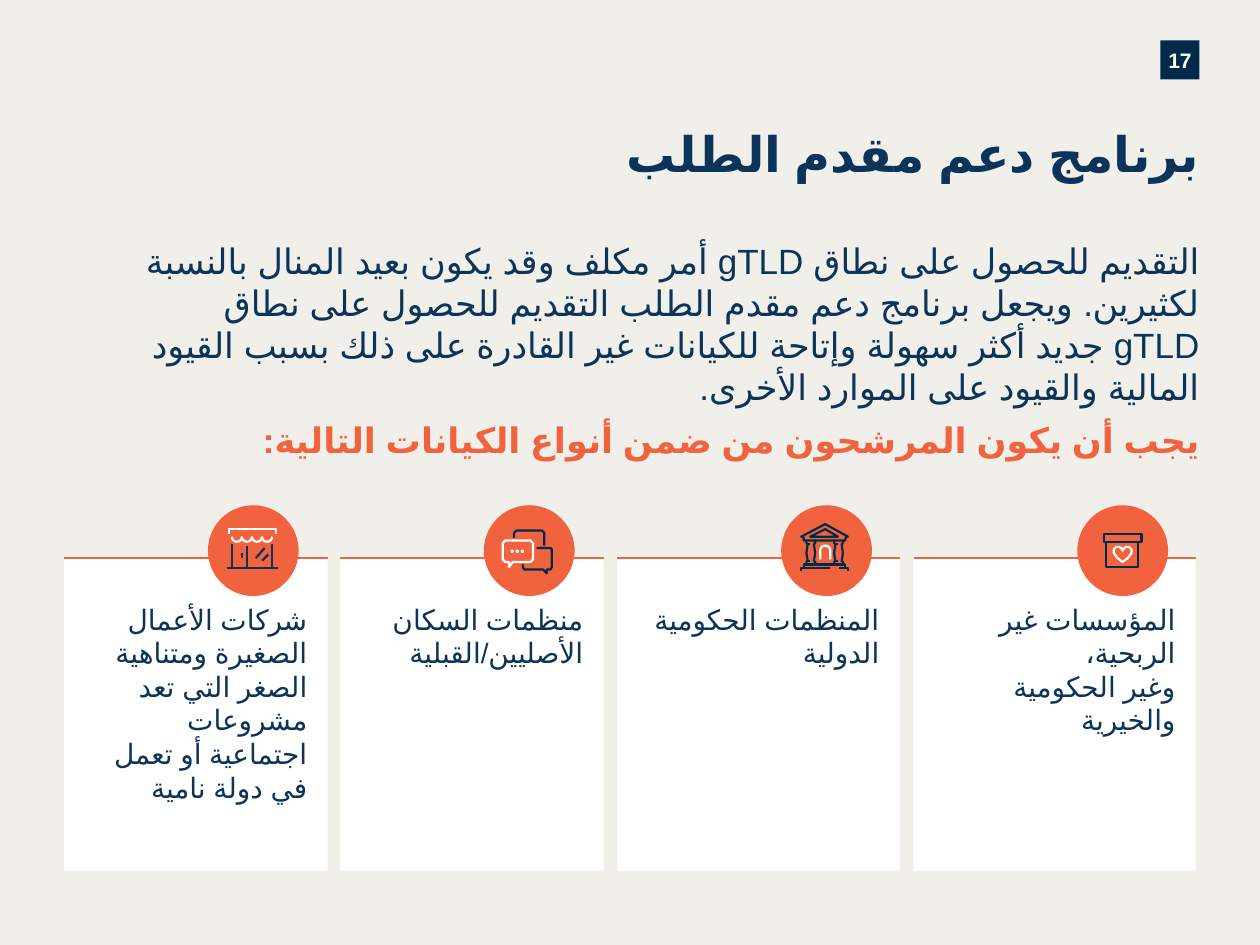
from math import cos, pi, sin

from lxml.etree import SubElement
from pptx import Presentation
from pptx.dml.color import RGBColor
from pptx.enum.shapes import MSO_CONNECTOR, MSO_SHAPE
from pptx.enum.text import MSO_ANCHOR, MSO_AUTO_SIZE, PP_ALIGN
from pptx.oxml.ns import qn
from pptx.util import Inches, Pt

PAPER = RGBColor(0xF1, 0xEF, 0xEA)
WHITE = RGBColor(0xFF, 0xFF, 0xFF)
NAVY = RGBColor(0x0B, 0x34, 0x58)
DARK = RGBColor(0x00, 0x2B, 0x49)
BADGE = RGBColor(0x00, 0x2A, 0x49)
ORANGE = RGBColor(0xF1, 0x63, 0x3E)


def write(frame, paragraphs, size, color, bold=False, insets=(0, 0, 0, 0),
          anchor=MSO_ANCHOR.TOP, align=PP_ALIGN.RIGHT):
    """Fill a text frame; right-aligned text is Arabic and runs right to left."""
    frame.word_wrap = True
    frame.auto_size = MSO_AUTO_SIZE.NONE
    frame.vertical_anchor = anchor
    (frame.margin_left, frame.margin_top,
     frame.margin_right, frame.margin_bottom) = map(Inches, insets)
    for i, text in enumerate(paragraphs):
        paragraph = frame.add_paragraph() if i else frame.paragraphs[0]
        paragraph.alignment = align
        run = paragraph.add_run()
        run.text = text
        run.font.name = "Arial"
        run.font.size = Pt(size)
        run.font.bold = bold
        run.font.color.rgb = color
        if align == PP_ALIGN.RIGHT:
            paragraph._p.get_or_add_pPr().set("rtl", "1")
            properties = run._r.get_or_add_rPr()
            properties.set("lang", "ar")
            SubElement(properties, qn("a:cs"), typeface="Arial")


def stroke(shapes, points, color, closed=False):
    """Draw a line through points given in inches."""
    points = [(Inches(x), Inches(y)) for x, y in points]
    if len(points) == 2:
        line = shapes.add_connector(MSO_CONNECTOR.STRAIGHT, *points[0], *points[1])
        SubElement(line._element.spPr, qn("a:effectLst"))
    else:
        builder = shapes.build_freeform(*points[0])
        builder.add_line_segments(points[1:], close=closed)
        line = builder.convert_to_shape()
        line.fill.background()
        line.shadow.inherit = False
    line.line.color.rgb = color
    line.line.width = Pt(1.25)


prs = Presentation()
prs.slide_width, prs.slide_height = Inches(10), Inches(7.5)
slide = prs.slides.add_slide(prs.slide_layouts[5])
slide.background.fill.solid()
slide.background.fill.fore_color.rgb = PAPER

# Page number, title and introduction
badge = slide.shapes.add_shape(
    MSO_SHAPE.RECTANGLE, Inches(9.21), Inches(0.32), Inches(0.31), Inches(0.31))
badge.fill.solid()
badge.fill.fore_color.rgb = BADGE
badge.line.fill.background()
badge.shadow.inherit = False
write(badge.text_frame, ["17"], 12, WHITE, True,
      anchor=MSO_ANCHOR.MIDDLE, align=PP_ALIGN.CENTER)

title = slide.shapes.title
title.left, title.top = Inches(4.02), Inches(0.98)
title.width, title.height = Inches(5.5), Inches(0.55)
write(title.text_frame, ["برنامج دعم مقدم الطلب"], 28, NAVY, True)

intro = slide.shapes.add_textbox(Inches(1.1), Inches(1.9), Inches(8.42), Inches(1.49))
write(intro.text_frame, [
    "التقديم للحصول على نطاق gTLD أمر مكلف وقد يكون بعيد المنال بالنسبة لكثيرين. "
    "ويجعل برنامج دعم مقدم الطلب التقديم للحصول على نطاق gTLD جديد أكثر سهولة وإتاحة "
    "للكيانات غير القادرة على ذلك بسبب القيود المالية والقيود على الموارد الأخرى."],
    20, NAVY)
lead = slide.shapes.add_textbox(Inches(1.75), Inches(3.32), Inches(7.77), Inches(0.43))
write(lead.text_frame, ["يجب أن يكون المرشحون من ضمن أنواع الكيانات التالية:"],
      20, ORANGE, True)

# Cards: left, width, left of the disc, paragraphs
cards = [
    (7.25, 2.24, 8.55, ["المؤسسات غير الربحية،", "وغير الحكومية والخيرية"]),
    (4.9, 2.24, 6.2, ["المنظمات الحكومية الدولية"]),
    (2.7, 2.09, 3.84, ["منظمات السكان الأصليين/القبلية"]),
    (0.51, 2.09, 1.65, ["شركات الأعمال الصغيرة ومتناهية الصغر التي تعد مشروعات "
                        "اجتماعية أو تعمل في دولة نامية"]),
]
CARD_TOP = 4.43
icons = []
for left, width, disc_left, paragraphs in cards:
    card = slide.shapes.add_shape(
        MSO_SHAPE.RECTANGLE, Inches(left), Inches(CARD_TOP), Inches(width), Inches(2.48))
    card.fill.solid()
    card.fill.fore_color.rgb = WHITE
    card.line.fill.background()
    card.shadow.inherit = False
    write(card.text_frame, paragraphs, 16, NAVY, insets=(0.24, 0.35, 0.16, 0.2))
    stroke(slide.shapes, [(left + width, CARD_TOP), (left, CARD_TOP)], ORANGE)

    icon = slide.shapes.add_group_shape().shapes
    disc = icon.add_shape(MSO_SHAPE.OVAL, Inches(disc_left), Inches(4.01),
                          Inches(0.72), Inches(0.72))
    disc.fill.solid()
    disc.fill.fore_color.rgb = ORANGE
    disc.line.fill.background()
    disc.shadow.inherit = False
    icons.append(icon)
charity, bank, chat, shop = icons

# Charity box with a heart
for x1, y1, x2, y2 in [(8.76, 4.24, 9.06, 4.3), (8.78, 4.3, 9.03, 4.5)]:
    stroke(charity, [(x1, y1), (x2, y1), (x2, y2), (x1, y2)], DARK, True)
heart_half = [(0, 4.37), (0.01, 4.35), (0.03, 4.34), (0.05, 4.34),
              (0.07, 4.36), (0.07, 4.39), (0.04, 4.43), (0, 4.46)]
stroke(charity, [(8.91 + dx, y) for dx, y in heart_half]
       + [(8.91 - dx, y) for dx, y in heart_half[-2:0:-1]], WHITE, True)

# Columned building
stroke(bank, [(6.59, 4.51), (6.36, 4.51), (6.36, 4.53)], DARK)
stroke(bank, [(6.73, 4.53), (6.73, 4.51), (6.66, 4.51)], DARK)
stroke(bank, [(6.71, 4.51), (6.71, 4.48), (6.38, 4.48), (6.38, 4.51)], DARK)
arch = [(6.55 + 0.04 * cos(pi * i / 8), 4.37 - 0.04 * sin(pi * i / 8)) for i in range(9)]
stroke(bank, [(6.59, 4.44), *arch, (6.51, 4.44)], WHITE)
column_side = [(0, 4.29), (0, 4.31), (0.01, 4.32), (0, 4.39),
               (0.01, 4.45), (0, 4.46), (0, 4.48)]
for column in (6.4, 6.62):
    stroke(bank, [(column + dx, y) for dx, y in column_side], DARK)
    stroke(bank, [(column + 0.07 - dx, y) for dx, y in column_side], DARK)
    for y in (4.32, 4.45):
        stroke(bank, [(column + 0.01, y), (column + 0.03, y)], DARK)
stroke(bank, [(6.55, 4.2), (6.65, 4.26), (6.43, 4.26)], DARK, True)
stroke(bank, [(6.38, 4.29), (6.71, 4.29), (6.71, 4.27), (6.73, 4.26),
              (6.55, 4.16), (6.36, 4.26), (6.38, 4.27)], DARK, True)

# Speech bubbles
stroke(chat, [(4.21, 4.29), (4.01, 4.29), (3.99, 4.31), (3.99, 4.44), (4.01, 4.46),
              (4.04, 4.46), (4.04, 4.5), (4.07, 4.46), (4.21, 4.46), (4.23, 4.44),
              (4.23, 4.31)], WHITE, True)
stroke(chat, [(4.15, 4.48), (4.15, 4.5), (4.16, 4.52), (4.31, 4.52), (4.34, 4.55),
              (4.34, 4.52), (4.37, 4.52), (4.38, 4.5), (4.38, 4.36), (4.37, 4.35),
              (4.26, 4.35)], DARK)
stroke(chat, [(4.08, 4.27), (4.08, 4.23), (4.1, 4.21), (4.3, 4.21), (4.32, 4.23),
              (4.32, 4.33)], DARK)
for x in (4.06, 4.1, 4.14):
    dot = chat.add_shape(MSO_SHAPE.OVAL, Inches(x), Inches(4.37), Inches(0.01), Inches(0.01))
    dot.fill.background()
    dot.line.color.rgb = WHITE
    dot.line.width = Pt(1.25)
    dot.shadow.inherit = False

# Shop front
for x1, y1, x2, y2 in [(1.84, 4.32, 1.84, 4.51), (1.96, 4.33, 1.96, 4.51),
                       (2.16, 4.32, 2.16, 4.51), (1.92, 4.39, 1.92, 4.43),
                       (1.8, 4.51, 2.21, 4.51), (2.1, 4.35, 2.03, 4.43),
                       (2.13, 4.4, 2.08, 4.45)]:
    stroke(shop, [(x1, y1), (x2, y2)], NAVY)
for center in (1.88, 1.96, 2.04, 2.12):
    stroke(shop, [(center + 0.04 * cos(pi * i / 8), 4.26 + 0.04 * sin(pi * i / 8))
                  for i in range(9)], WHITE)
stroke(shop, [(1.82, 4.24), (1.82, 4.2), (2.19, 4.2), (2.19, 4.24)], WHITE)

prs.save("out.pptx")
